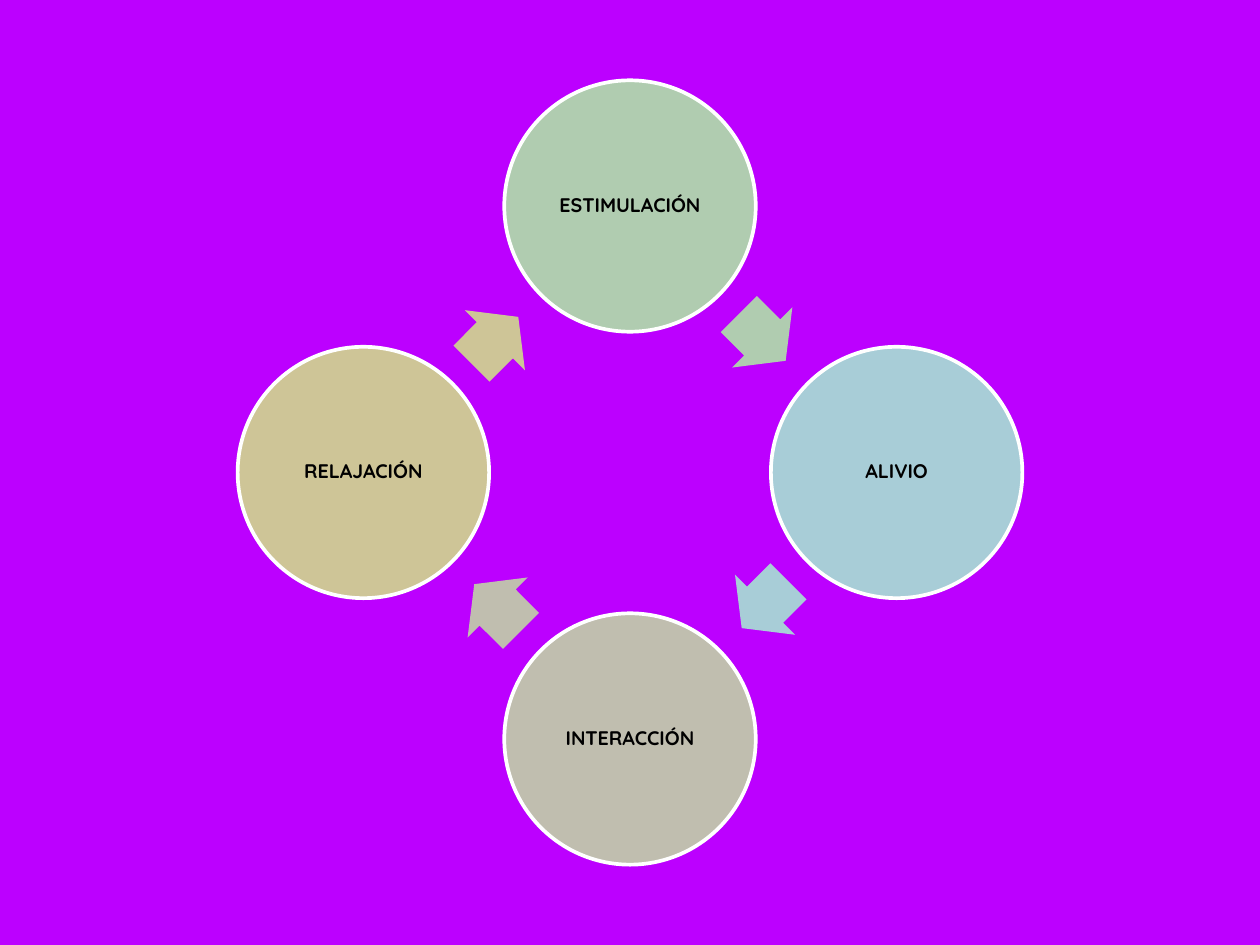
"""Build a slide with a four-stage cycle of circles joined by arrows."""
from dataclasses import dataclass
from math import cos, radians, sin

from pptx import Presentation
from pptx.dml.color import RGBColor
from pptx.enum.shapes import MSO_SHAPE
from pptx.enum.text import MSO_ANCHOR, PP_ALIGN
from pptx.util import Inches, Pt

CIRCLE, ARROW = MSO_SHAPE.OVAL, MSO_SHAPE.RIGHT_ARROW
MIDDLE, CENTER = MSO_ANCHOR.MIDDLE, PP_ALIGN.CENTER

PURPLE = RGBColor(0xBC, 0x00, 0xFF)
WHITE = RGBColor(0xFF, 0xFF, 0xFF)
BLACK = RGBColor(0x00, 0x00, 0x00)
GREEN = RGBColor(0xB0, 0xCC, 0xB0)
BLUE = RGBColor(0xA8, 0xCD, 0xD7)
GREY = RGBColor(0xC0, 0xBE, 0xAF)
SAND = RGBColor(0xCE, 0xC5, 0x97)

WIDTH, HEIGHT = Inches(14.22), Inches(10.67)
ROW = HEIGHT / 100
STAGE_ORBIT, STAGE_SIZE = 28.2, 26.6
ARROW_ORBIT, ARROW_LENGTH, ARROW_BREADTH = 20, 7, 9
ARROW_LEAD = 44.4
FIRST_ANGLE = -90


@dataclass(frozen=True)
class Stage:
    label: str
    color: RGBColor


STAGES = (
    Stage("ESTIMULACIÓN", GREEN),
    Stage("ALIVIO", BLUE),
    Stage("INTERACCIÓN", GREY),
    Stage("RELAJACIÓN", SAND),
)


def add_on_orbit(slide, kind, angle: float, orbit: float,
                 width: float, height: float, color: RGBColor):
    x = WIDTH / 2 + orbit * ROW * cos(radians(angle))
    y = HEIGHT / 2 + orbit * ROW * sin(radians(angle))
    w, h = width * ROW, height * ROW
    shape = slide.shapes.add_shape(
        kind, round(x - w / 2), round(y - h / 2), round(w), round(h))
    shape.shadow.inherit = False
    shape.fill.solid()
    shape.fill.fore_color.rgb = color
    shape.line.fill.background()
    return shape


def write(shape, text: str, *, size: float = 16, font: str = "Quicksand",
          color: RGBColor = BLACK, bold: bool = True, inset: float = 0.02) -> None:
    frame = shape.text_frame
    frame.word_wrap = True
    frame.vertical_anchor = MIDDLE
    frame.margin_left = frame.margin_right = Inches(inset)
    frame.margin_top = frame.margin_bottom = Inches(inset)
    paragraph = frame.paragraphs[0]
    paragraph.alignment = CENTER
    paragraph.line_spacing = 0.9
    run = paragraph.add_run()
    run.text = text
    run.font.size = Pt(size)
    run.font.name = font
    run.font.bold = bold
    run.font.color.rgb = color


def add_stage(slide, stage: Stage, angle: float) -> None:
    circle = add_on_orbit(slide, CIRCLE, angle, STAGE_ORBIT,
                          STAGE_SIZE, STAGE_SIZE, stage.color)
    circle.line.color.rgb = WHITE
    circle.line.width = Pt(3)
    write(circle, stage.label)


def add_arrow(slide, color: RGBColor, angle: float, step: float) -> None:
    arrow = add_on_orbit(slide, ARROW, angle + ARROW_LEAD, ARROW_ORBIT,
                         ARROW_LENGTH, ARROW_BREADTH, color)
    arrow.adjustments[0] = 0.6
    arrow.adjustments[1] = 0.5
    arrow.rotation = (angle + step / 2 + 90) % 360


def main() -> None:
    deck = Presentation()
    deck.slide_width, deck.slide_height = WIDTH, HEIGHT
    slide = deck.slides.add_slide(deck.slide_layouts[6])
    slide.background.fill.solid()
    slide.background.fill.fore_color.rgb = PURPLE
    step = 360 / len(STAGES)
    for index, stage in enumerate(STAGES):
        angle = FIRST_ANGLE + index * step
        add_stage(slide, stage, angle)
        add_arrow(slide, stage.color, angle, step)
    deck.save("out.pptx")


if __name__ == "__main__":
    main()
